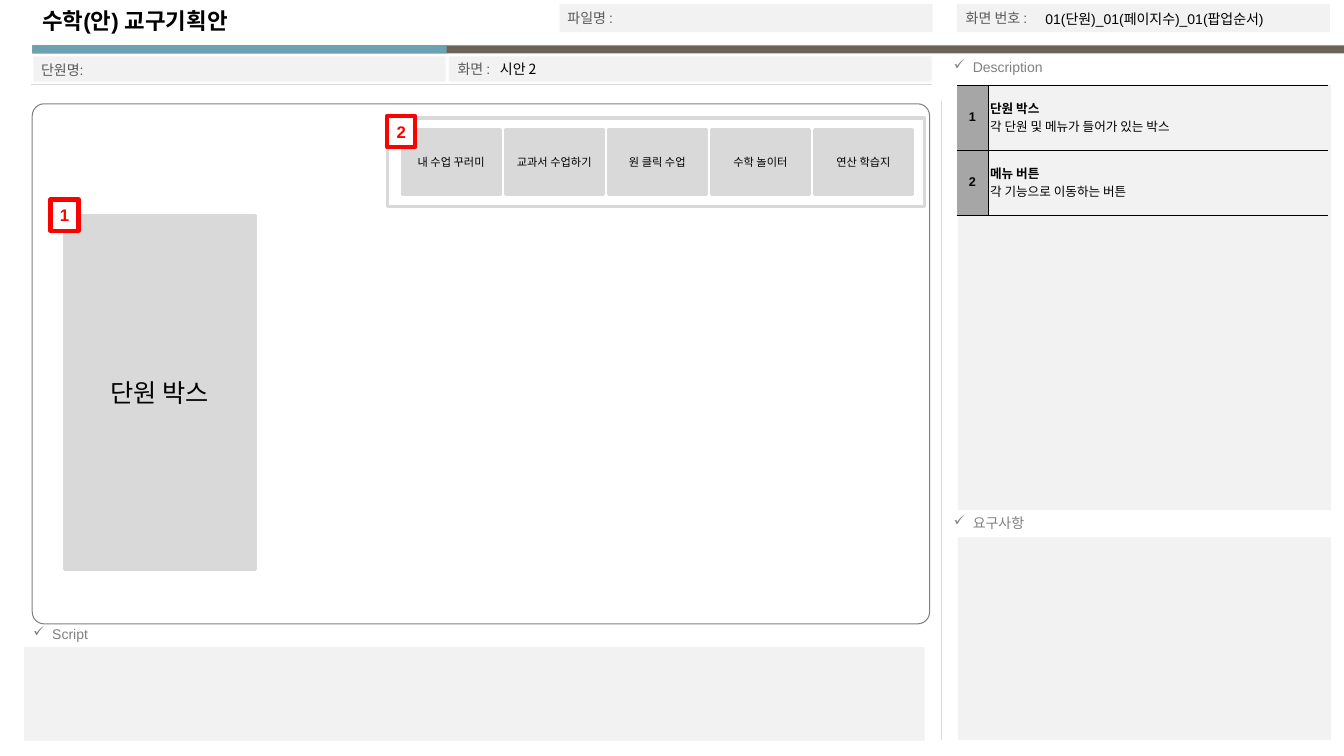
from dataclasses import dataclass
from typing import NamedTuple

from lxml.etree import SubElement
from pptx import Presentation
from pptx.dml.color import RGBColor
from pptx.enum.shapes import MSO_CONNECTOR as Connector, MSO_SHAPE as Shape
from pptx.enum.text import MSO_ANCHOR as Anchor, PP_ALIGN as Align
from pptx.oxml.ns import qn
from pptx.util import Inches, Pt


@dataclass(frozen=True)
class Theme:
    latin: str = "Arial"
    korean: str = "Noto Sans CJK KR"
    black: str = "000000"
    white: str = "FFFFFF"
    red: str = "FF0000"
    teal: str = "6BA1B2"
    brown: str = "6D6359"
    panel: str = "F2F2F2"
    box: str = "D9D9D9"
    number: str = "A6A6A6"
    heading: str = "808080"
    label: str = "595959"
    title_size: float = 16
    unit_size: float = 18
    marker_size: float = 12
    body_size: float = 10
    table_size: float = 9
    button_size: float = 8


THEME = Theme()


class Box(NamedTuple):
    left: float
    top: float
    width: float
    height: float

    def lengths(self) -> list:
        return [Inches(side) for side in self]


class Style(NamedTuple):
    size: float
    color: str = THEME.black
    font: str = THEME.latin
    bold: bool = False


class Section(NamedTuple):
    heading: str
    heading_box: Box
    panel: Box


class Field(NamedTuple):
    label: str
    panel: Box
    label_box: Box


class Note(NamedTuple):
    number: str
    name: str
    detail: str


SECTIONS = [
    Section("Description", Box(9.36, 0.53, 3.97, 0.27), Box(9.5, 0.84, 3.7, 4.22)),
    Section("요구사항", Box(9.36, 5.06, 3.97, 0.27), Box(9.5, 5.33, 3.7, 2.01)),
    Section("Script", Box(0.23, 6.16, 3.94, 0.31), Box(0.24, 6.42, 8.93, 0.93)),
]
FIELDS = [
    Field("단원명:", Box(0.33, 0.56, 4.09, 0.25), Box(0.31, 0.57, 3.66, 0.25)),
    Field("화면 :", Box(4.45, 0.56, 4.79, 0.25), Box(4.44, 0.56, 3.66, 0.25)),
    Field("파일명 :", Box(5.55, 0.04, 3.7, 0.28), Box(5.53, 0.05, 3.66, 0.25)),
    Field("화면 번호 :", Box(9.49, 0.04, 3.7, 0.28), Box(9.48, 0.05, 3.66, 0.25)),
]
NOTES = [
    Note("1", "단원 박스", "각 단원 및 메뉴가 들어가 있는 박스"),
    Note("2", "메뉴 버튼", "각 기능으로 이동하는 버튼"),
]
MENU = ["내 수업 꾸러미", "교과서 수업하기", "원 클릭 수업", "수학 놀이터", "연산 학습지"]
MENU_LEFT, MENU_PITCH = 3.99, (8.08 - 3.99) / 4


def rgb(color: str) -> RGBColor:
    return RGBColor.from_string(color)


def format_paragraph(paragraph, style: Style, align=Align.LEFT) -> None:
    paragraph.alignment = align
    for run in paragraph.runs:
        run.font.name = style.font
        run.font.size = Pt(style.size)
        run.font.bold = style.bold
        run.font.color.rgb = rgb(style.color)
        SubElement(run.font._element, qn("a:ea"), typeface=THEME.korean)


def add_box(slide, box: Box, fill: str = "", line: str = "", weight: float = 2.25,
            kind=Shape.RECTANGLE):
    """Draw a shape; an empty colour means no fill or no outline."""
    shape = slide.shapes.add_shape(kind, *box.lengths())
    shape.shadow.inherit = False
    if fill:
        shape.fill.solid()
        shape.fill.fore_color.rgb = rgb(fill)
    else:
        shape.fill.background()
    if line:
        shape.line.color.rgb = rgb(line)
        shape.line.width = Pt(weight)
    else:
        shape.line.fill.background()
    return shape


def add_caption(shape, caption: str, style: Style) -> None:
    frame = shape.text_frame
    frame.text = caption
    frame.word_wrap = True
    frame.vertical_anchor = Anchor.MIDDLE
    frame.margin_left = frame.margin_right = 0
    format_paragraph(frame.paragraphs[0], style, Align.CENTER)


def add_text(slide, box: Box, text: str, style: Style, anchor=Anchor.MIDDLE):
    frame = slide.shapes.add_textbox(*box.lengths()).text_frame
    frame.text = text
    frame.word_wrap = True
    frame.vertical_anchor = anchor
    format_paragraph(frame.paragraphs[0], style)
    return frame.paragraphs[0]


def add_section(slide, section: Section) -> None:
    add_box(slide, section.panel, THEME.panel)
    heading = add_text(slide, section.heading_box, section.heading,
                       Style(THEME.body_size, THEME.heading), Anchor.TOP)
    properties = heading._p.get_or_add_pPr()
    indent = Inches(0.19)
    properties.set("marL", str(indent))
    properties.set("indent", str(-indent))
    SubElement(properties, qn("a:buChar"), char="✓")


def add_rule(slide, x1: float, y1: float, x2: float, y2: float) -> None:
    rule = slide.shapes.add_connector(
        Connector.STRAIGHT, *[Inches(value) for value in (x1, y1, x2, y2)])
    rule.line.color.rgb = rgb(THEME.box)
    rule.line.width = Pt(0.75)
    SubElement(rule._element.spPr, qn("a:effectLst"))


def add_marker(slide, number: str, left: float, top: float) -> None:
    marker = add_box(slide, Box(left, top, 0.28, 0.31), THEME.white, THEME.red, 3)
    add_caption(marker, number, Style(THEME.marker_size, THEME.red, bold=True))


def format_cell(cell, drawn_sides: str, fill: str = "") -> None:
    """Set margins, fill and hairline borders on the sides named by L, R, T, B."""
    cell.margin_left = cell.margin_right = Inches(0.02)
    cell.margin_top = cell.margin_bottom = Inches(0.02)
    cell.vertical_anchor = Anchor.MIDDLE
    for side in "LRTB":
        border = SubElement(cell._tc.get_or_add_tcPr(), qn(f"a:ln{side}"), w=str(Pt(0.25)))
        if side in drawn_sides:
            paint = SubElement(border, qn("a:solidFill"))
            SubElement(paint, qn("a:srgbClr"), val=THEME.black)
        else:
            SubElement(border, qn("a:noFill"))
    if fill:
        cell.fill.solid()
        cell.fill.fore_color.rgb = rgb(fill)
    else:
        cell.fill.background()


def add_notes_table(slide, notes: list[Note], box: Box) -> None:
    table = slide.shapes.add_table(len(notes), 2, *box.lengths()).table
    table.first_row = table.horz_banding = False
    table.columns[0].width, table.columns[1].width = Inches(0.31), Inches(3.37)
    for row, note in enumerate(notes):
        number, description = table.cell(row, 0), table.cell(row, 1)
        number.text = note.number
        format_cell(number, "RTB", THEME.number)
        format_paragraph(number.text_frame.paragraphs[0],
                         Style(THEME.table_size, bold=True), Align.CENTER)
        description.text = f"{note.name}\n{note.detail}"
        format_cell(description, "LTB")
        for paragraph, bold in zip(description.text_frame.paragraphs, (True, False)):
            format_paragraph(paragraph, Style(THEME.table_size, font=THEME.korean, bold=bold))


def main() -> None:
    deck = Presentation()
    deck.slide_width, deck.slide_height = Inches(13.33), Inches(7.5)
    slide = deck.slides.add_slide(deck.slide_layouts[6])

    add_box(slide, Box(0.32, 0.45, 13.01, 0.08), THEME.brown)
    add_box(slide, Box(0.32, 0.45, 4.11, 0.08), THEME.teal)
    add_rule(slide, 9.34, 1, 9.34, 7.34)
    for section in SECTIONS:
        add_section(slide, section)
    for field in FIELDS:
        add_box(slide, field.panel, THEME.panel)
        add_text(slide, field.label_box, field.label, Style(THEME.body_size, THEME.label))
    add_rule(slide, 0.31, 0.84, 9.24, 0.84)
    screen = add_box(slide, Box(0.32, 1.03, 8.9, 5.16), THEME.white, THEME.heading, 0.75,
                     Shape.ROUNDED_RECTANGLE)
    screen.adjustments[0] = 0.023

    add_text(slide, Box(0.32, 0.02, 5.2, 0.37), "수학(안) 교구기획안",
             Style(THEME.title_size, bold=True))
    add_text(slide, Box(4.86, 0.56, 4.38, 0.25), "시안 2",
             Style(THEME.body_size, font=THEME.korean))
    add_text(slide, Box(10.27, 0.06, 2.9, 0.25), "01(단원)_01(페이지수)_01(팝업순서)",
             Style(THEME.body_size))
    add_notes_table(slide, NOTES, Box(9.49, 0.84, 3.68, 1.29))

    unit = add_box(slide, Box(0.64, 2.14, 1.89, 3.51), THEME.box, THEME.box)
    add_caption(unit, "단원 박스", Style(THEME.unit_size, font=THEME.korean))
    add_marker(slide, "1", 0.5, 1.98)
    for index, name in enumerate(MENU):
        button = add_box(slide, Box(MENU_LEFT + index * MENU_PITCH, 1.29, 0.97, 0.64),
                         THEME.box, THEME.box)
        add_caption(button, name, Style(THEME.button_size, font=THEME.korean))
    add_box(slide, Box(3.84, 1.17, 5.33, 0.88), line=THEME.box)
    add_marker(slide, "2", 3.84, 1.15)

    deck.save("out.pptx")


if __name__ == "__main__":
    main()
